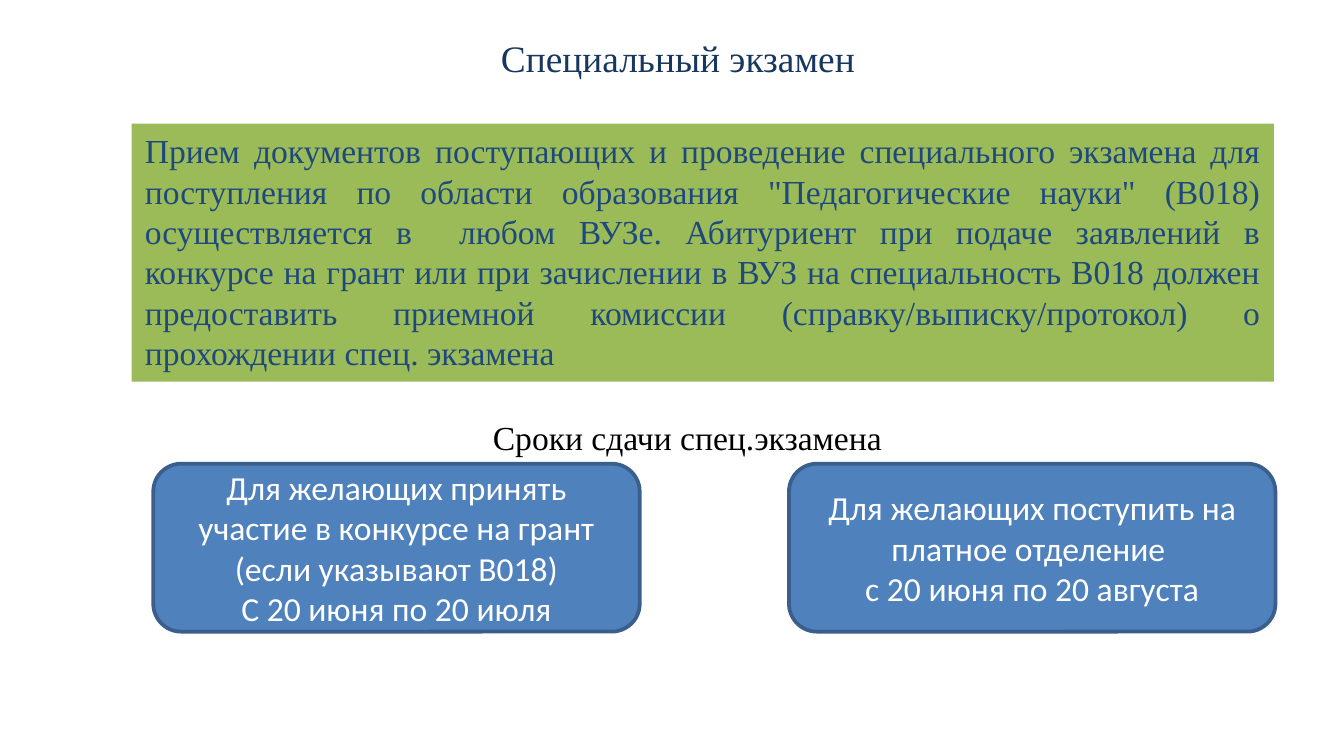
from dataclasses import dataclass

from pptx import Presentation
from pptx import util as u
from pptx.dml.color import RGBColor
from pptx.enum import shapes, text

PX = 9144  # EMU in one px, 100 px to the inch
WIDE = 1000

NAVY = RGBColor(0x17, 0x37, 0x5E)
INK = RGBColor(0x1F, 0x49, 0x7D)
GREEN = RGBColor(0x9B, 0xBB, 0x59)
BLUE = RGBColor(0x4F, 0x81, 0xBD)
EDGE = RGBColor(0x3A, 0x5F, 0x8C)
BLACK = RGBColor(0, 0, 0)
WHITE = RGBColor(0xFF, 0xFF, 0xFF)

SERIF = "Times New Roman"
SANS = "Calibri"


@dataclass(frozen=True)
class Box:
    x: int
    y: int
    w: int
    h: int

    def emu(self) -> tuple[int, ...]:
        return tuple(n * PX for n in (self.x, self.y, self.w, self.h))


@dataclass(frozen=True)
class Style:
    color: RGBColor
    face: str = SERIF
    size: int = 18
    align: text.PP_ALIGN = text.PP_ALIGN.CENTER
    anchor: text.MSO_ANCHOR = text.MSO_ANCHOR.TOP


@dataclass(frozen=True)
class Term:
    x: int
    lines: tuple[str, str]


TITLE = "Специальный экзамен"
RULE = (
    "Прием документов поступающих и проведение специального экзамена для "
    "поступления по области образования \"Педагогические науки\" (В018) "
    "осуществляется в  любом ВУЗе. Абитуриент при подаче заявлений в "
    "конкурсе на грант или при зачислении в ВУЗ на специальность В018 должен "
    "предоставить приемной комиссии (справку/выписку/протокол) о "
    "прохождении спец. экзамена"
)
HEAD = "Сроки сдачи спец.экзамена"
TERMS = (
    Term(114, ("Для желающих принять участие в конкурсе на грант "
               "(если указывают В018)", "С 20 июня по 20 июля")),
    Term(587, ("Для желающих поступить на платное отделение ",
               "с 20 июня по 20 августа")),
)


def write(shape, lines: tuple[str, ...], style: Style) -> None:
    frame = shape.text_frame
    frame.word_wrap = True
    frame.auto_size = text.MSO_AUTO_SIZE.NONE
    frame.vertical_anchor = style.anchor
    frame.text = "\n".join(lines)
    for para in frame.paragraphs:
        para.alignment = style.align
        para.font.name = style.face
        para.font.size = u.Pt(style.size)
        para.font.color.rgb = style.color


def panel(slide, kind: shapes.MSO_SHAPE, box: Box, fill: RGBColor):
    """Add a flat filled shape without an outline."""
    shape = slide.shapes.add_shape(kind, *box.emu())
    shape.shadow.inherit = False
    shape.fill.solid()
    shape.fill.fore_color.rgb = fill
    shape.line.fill.background()
    return shape


def card(slide, term: Term) -> None:
    box = Box(term.x, 345, 362, 125)
    shape = panel(slide, shapes.MSO_SHAPE.ROUNDED_RECTANGLE, box, BLUE)
    shape.line.color.rgb = EDGE
    shape.line.width = u.Pt(2)
    write(shape, term.lines, Style(WHITE, SANS, anchor=text.MSO_ANCHOR.MIDDLE))


def main() -> None:
    deck = Presentation()
    deck.slide_width = WIDE * PX
    deck.slide_height = WIDE * PX * 9 // 16
    slide = deck.slides.add_slide(deck.slide_layouts[5])

    title = slide.shapes.title
    title.left, title.top, title.width, title.height = Box(280, 21, 449, 44).emu()
    write(title, (TITLE,), Style(NAVY, size=20))

    rule = panel(slide, shapes.MSO_SHAPE.RECTANGLE, Box(98, 92, 850, 192), GREEN)
    write(rule, (RULE,), Style(INK, align=text.PP_ALIGN.JUSTIFY))

    head = slide.shapes.add_textbox(*Box(114, 305, 795, 40).emu())
    write(head, (HEAD,), Style(BLACK))

    for term in TERMS:
        card(slide, term)

    deck.save("out.pptx")


if __name__ == "__main__":
    main()
